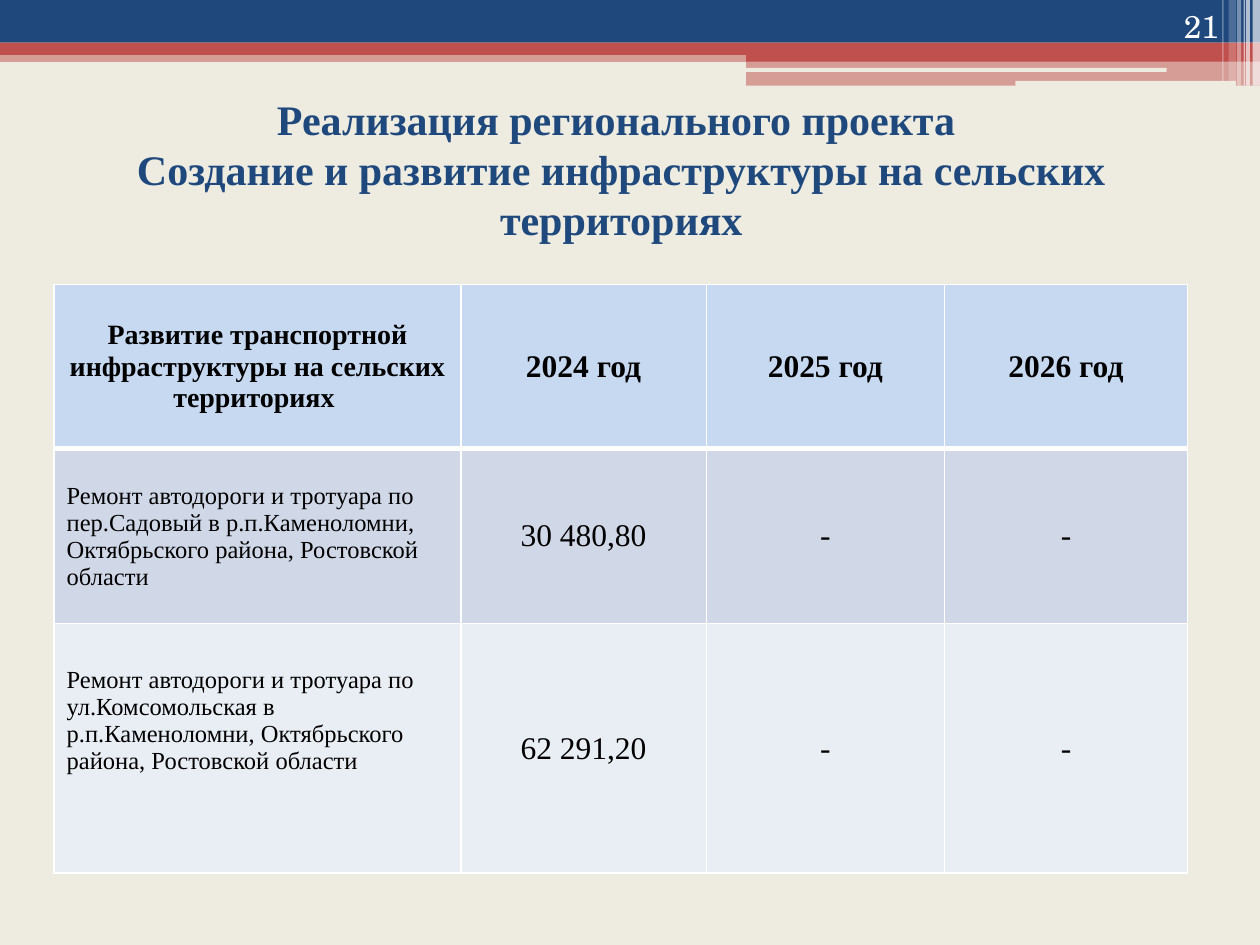
"""Build the slide on rural infrastructure spending."""
from lxml.etree import SubElement as Sub
from pptx import Presentation
from pptx.dml.color import RGBColor
from pptx.enum.shapes import MSO_SHAPE as Kind
from pptx.enum.text import MSO_ANCHOR as Anchor, MSO_AUTO_SIZE as Auto, PP_ALIGN as Align
from pptx.oxml.ns import qn
from pptx.util import Cm, Pt

NAVY, RED, SAND, WHITE = "1F497D", "C0504D", "EEECE1", "FFFFFF"


def tint(code):
    return RGBColor.from_string(code)


def box(*sizes):
    return [Cm(size) for size in sizes]


class Deck:
    font = "Times New Roman"

    def __init__(self):
        self.file = Presentation()
        self.file.slide_width, self.file.slide_height = Cm(25.4), Cm(19.05)
        self.slide = self.file.slides.add_slide(self.file.slide_layouts[5])
        self.paint(self.slide.background.fill, SAND)

    def paint(self, fill, code, alpha=100):
        fill.solid()
        fill.fore_color.rgb = tint(code)

    def text(self, para, words, size, code="000000", bold=False, font=None):
        run = para.add_run()
        run.text = words
        run.font.name, run.font.size = font or self.font, Pt(size)
        run.font.bold, run.font.color.rgb = bold, tint(code)

    def bar(self, place, code, alpha=100, kind=Kind.RECTANGLE):
        shape = self.slide.shapes.add_shape(kind, *box(*place))
        shape.shadow.inherit = False
        shape.line.fill.background()
        self.paint(shape.fill, code)
        if alpha < 100:
            color = shape.element.spPr.find(qn("a:solidFill"))[0]
            Sub(color, qn("a:alpha")).set("val", str(alpha * 1000))

    def title(self, place, lines):
        shape = self.slide.shapes.title
        shape.left, shape.top, shape.width, shape.height = box(*place)
        frame = shape.text_frame
        frame.auto_size, frame.vertical_anchor = Auto.NONE, Anchor.MIDDLE
        para = frame.paragraphs[0]
        para.alignment = Align.CENTER
        for rank, line in enumerate(lines):
            if rank:
                para.add_line_break()
            self.text(para, line, 24, NAVY, True)

    def number(self, place, words):
        frame = self.slide.shapes.add_textbox(*box(*place)).text_frame
        frame.word_wrap, frame.vertical_anchor = True, Anchor.BOTTOM
        para = frame.paragraphs[0]
        para.alignment = Align.RIGHT
        self.text(para, words, 18, WHITE, font="TeX Gyre Schola")

    def edge(self, cell, top, base):
        props = cell._tc.get_or_add_tcPr()
        sides = {"L": 1, "R": 1, "T": top, "B": base}
        for side, width in sides.items():
            line = Sub(props, qn("a:ln" + side))
            line.set("w", str(Pt(width)))
            Sub(Sub(line, qn("a:solidFill")), qn("a:srgbClr")).set("val", WHITE)

    def table(self, spot, cols, highs, rows, fills, tops):
        grid = self.slide.shapes.add_table(
            len(rows), len(cols), *box(*spot, sum(cols), sum(highs))).table
        grid.first_row = grid.horz_banding = False
        for col, width in zip(grid.columns, cols):
            col.width = Cm(width)
        for y, row in enumerate(rows):
            grid.rows[y].height = Cm(highs[y])
            for x, words in enumerate(row):
                cell = grid.cell(y, x)
                self.edge(cell, 3 if y == 1 else 1, 1 if y else 3)
                self.paint(cell.fill, fills[y])
                label = y > 0 and x == 0
                cell.vertical_anchor = Anchor.TOP if label else Anchor.MIDDLE
                if label:
                    cell.margin_top = Cm(tops[y])
                para = cell.text_frame.paragraphs[0]
                para.alignment = Align.LEFT if label else Align.CENTER
                size = 18 if x else 14 if y else 16
                self.text(para, words, size, bold=y == 0)


def main():
    deck = Deck()
    deck.bar((0, 1.02, 25.4, 0.23), RED, 50)
    deck.bar((0, 0, 25.4, 0.86), NAVY)
    deck.bar((0, 0.86, 25.4, 0.25), RED)
    deck.bar((15.04, 0.99, 10.36, 0.25), RED)
    deck.bar((15.04, 1.22, 10.36, 0.51), RED, 50)
    for place in ((15.01, 1.37, 8.51, 0.08), (20.47, 1.63, 4.45, 0.1)):
        deck.bar(place, SAND, kind=Kind.ROUNDED_RECTANGLE)
    for left, width, high, alpha in (
            (25.25, 0.15, 1.73, 65), (25.12, 0.08, 1.73, 65),
            (25.07, 0.03, 1.73, 60), (24.94, 0.08, 1.73, 40),
            (24.77, 0.15, 1.63, 20), (24.64, 0.03, 1.63, 30)):
        deck.bar((left, 0, width, high), WHITE, alpha)
    deck.title((0.46, 2.51, 24.13, 1.78), (
        "Реализация регионального проекта ",
        "Создание и развитие инфраструктуры на сельских территориях"))
    work = "Ремонт автодороги и тротуара по {} в р.п.Каменоломни, Октябрьского района, Ростовской области"
    deck.table(
        (1.09, 5.74), (8.2, 4.95, 4.8, 4.9), (3.3, 3.53, 5.03),
        (("Развитие транспортной инфраструктуры на сельских территориях ",
          "2024 год", "2025 год", "2026 год"),
         (work.format("пер.Садовый"), "30 480,80", "-", "-"),
         (work.format("ул.Комсомольская"), "62 291,20", "-", "-")),
        ("C6D9F1", "D0D8E8", "E9EDF4"), (0, 0.68, 0.87))
    deck.number((22.71, 0, 2.11, 1.02), "21")
    deck.file.save("out.pptx")


if __name__ == "__main__":
    main()
